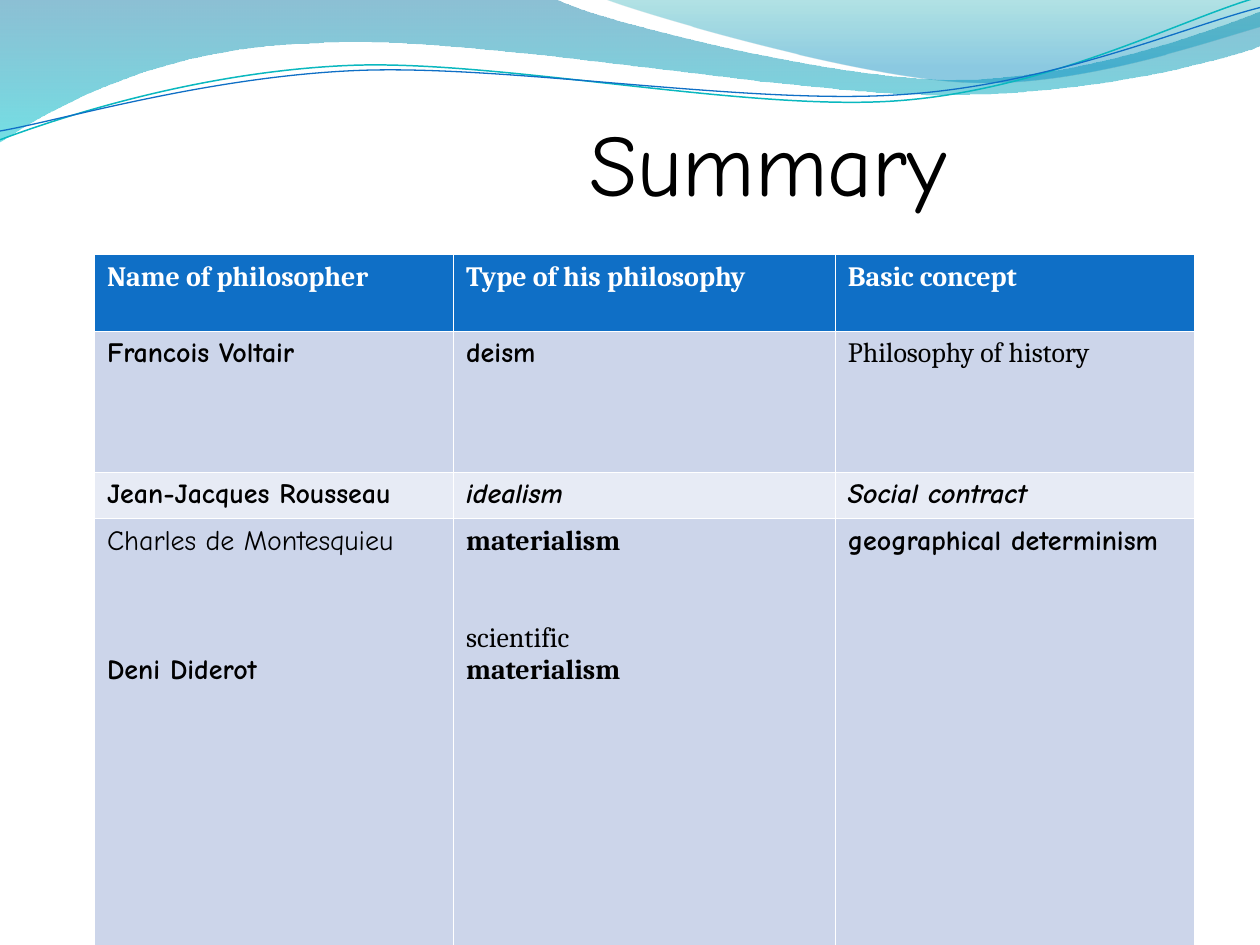
from lxml import etree
from pptx import Presentation
from pptx.dml.color import RGBColor
from pptx.enum import text
from pptx.oxml import ns
from pptx.util import Inches, Pt

WHITE = RGBColor(0xFF, 0xFF, 0xFF)
BLACK = RGBColor(0x00, 0x00, 0x00)
BLUE = RGBColor(0x0F, 0x6F, 0xC6)
TEAL = RGBColor(0x0A, 0xB8, 0xBF)
BAND_DARK = RGBColor(0xCC, 0xD5, 0xEA)
BAND_LIGHT = RGBColor(0xE7, 0xEB, 0xF5)
DEEP_BLUE = RGBColor(0x00, 0x74, 0xA1)
AQUA = RGBColor(0x00, 0xC6, 0xCF)
DEEP_TEAL = RGBColor(0x00, 0xA1, 0xA9)
SKY = RGBColor(0x00, 0x8B, 0xBF)

SERIF, COMIC = "Cambria", "Comic Neue"

# Waves: a start point, then line ends (2 numbers) or Bezier segments (6 numbers)
WIDE_WAVE = [(0, 0), (4.4, -0.01), (4.76, 0.17, 6.64, 0.63, 7.58, 0.63),
             (8.53, 0.63, 9.58, 0.26, 10, 0.09), (10.01, 0.36),
             (9.83, 0.44, 8.7, 0.76, 7.46, 0.75),
             (6.22, 0.75, 3.82, 0.28, 2.57, 0.34),
             (1.29, 0.36, 0.46, 0.83, -0.01, 1.13), (0, 0)]
RIGHT_WAVE = [(4.79, -0.01), (5.09, 0.11, 6.82, 0.62, 7.69, 0.65),
              (8.56, 0.69, 9.61, 0.32, 10, 0.21), (10, 0), (4.79, -0.01)]
TEAL_LINE = [(0, 1.11), (0.48, 0.93, 1.58, 0.57, 2.77, 0.52),
             (3.95, 0.47, 5.93, 0.89, 7.13, 0.8),
             (8.33, 0.71, 9.38, 0.15, 9.98, -0.02)]
BLUE_LINE = [(0, 1.04), (0.47, 0.96, 1.64, 0.61, 2.83, 0.56),
             (4.03, 0.51, 5.97, 0.84, 7.17, 0.75),
             (8.36, 0.67, 9.41, 0.21, 10, 0.06)]

# Table cells: paragraphs of (words, font, bold, italic, points before)
HEADER = [[(words, SERIF, True, False, 0)] for words in
          ("Name of philosopher", "Type of his philosophy", "Basic concept")]
ROWS = [
    HEADER,
    [[("Francois Voltair", COMIC, True, False, 0)],
     [("deism", COMIC, True, False, 0)],
     [("Philosophy of history", SERIF, False, False, 0)]],
    [[("Jean-Jacques Rousseau", COMIC, True, False, 0)],
     [("idealism", COMIC, True, True, 0)],
     [("Social contract", COMIC, True, True, 0)]],
    [[("Charles de Montesquieu", COMIC, False, False, 0),
      ("Deni Diderot", COMIC, True, False, 55.5)],
     [("materialism", SERIF, True, False, 0),
      ("scientific", SERIF, False, False, 37),
      ("materialism", SERIF, True, False, 0)],
     [("geographical determinism", COMIC, True, False, 0)]],
]
ROW_FILLS = [BLUE, BAND_DARK, BAND_LIGHT, BAND_DARK]
ROW_HEIGHTS = [0.61, 1.12, 0.35, 3.41]
COLUMN_WIDTHS = [2.85, 3.03, 2.85]


def add_curve(slide, segments, close):
    """Build the outline from segment ends, then bend the Bezier segments."""
    ends = [(Inches(segment[-2]), Inches(segment[-1])) for segment in segments]
    builder = slide.shapes.build_freeform(*ends[0])
    builder.add_line_segments(ends[1:], close=close)
    shape = builder.convert_to_shape()
    shape.shadow.inherit = False
    for line, segment in zip(shape._element.xpath(".//a:lnTo"), segments[1:]):
        if len(segment) == 6:
            bezier = etree.Element(ns.qn("a:cubicBezTo"))
            for x, y in zip(segment[::2], segment[1::2]):
                etree.SubElement(bezier, ns.qn("a:pt"), x=str(Inches(x) - shape.left),
                                 y=str(Inches(y) - shape.top))
            line.getparent().replace(line, bezier)
    return shape


def add_wave(slide, segments, stops):
    """Add a filled wave; stops are (position, colour, opacity percent)."""
    shape = add_curve(slide, segments, close=True)
    shape.line.fill.background()
    shape.fill.gradient()
    shape.fill.gradient_angle = 270
    for stop, (position, color, _) in zip(shape.fill.gradient_stops, stops):
        stop.position = position
        stop.color.rgb = color
    colors = shape._element.xpath(".//a:gs/a:srgbClr")
    for element, (_, _, opacity) in zip(colors, stops):
        etree.SubElement(element, ns.qn("a:alpha"), val=str(opacity * 1000))


def add_wave_line(slide, segments, color, width):
    shape = add_curve(slide, segments, close=False)
    shape.fill.background()
    shape.line.color.rgb = color
    shape.line.width = Pt(width)


def format_run(run, font, size, color, bold=False, italic=False):
    run.font.name = font
    run.font.size = Pt(size)
    run.font.color.rgb = color
    run.font.bold = bold
    run.font.italic = italic


def add_title(slide, words):
    box = slide.shapes.add_textbox(Inches(0.5), Inches(0.77), Inches(9), Inches(0.93))
    frame = box.text_frame
    frame.word_wrap = True
    frame.vertical_anchor = text.MSO_ANCHOR.BOTTOM
    frame.margin_left, frame.margin_right = Inches(4.18), 0
    frame.margin_top, frame.margin_bottom = Inches(0.05), 0
    frame.text = words
    format_run(frame.paragraphs[0].runs[0], COMIC, 50, BLACK)


def fill_cell(cell, paragraphs, color):
    cell.fill.solid()
    cell.fill.fore_color.rgb = color
    frame = cell.text_frame
    frame.text = "\n".join(item[0] for item in paragraphs)
    ink = WHITE if color == BLUE else BLACK
    for paragraph, (_, font, bold, italic, before) in zip(frame.paragraphs, paragraphs):
        if before:
            paragraph.space_before = Pt(before)
        format_run(paragraph.runs[0], font, 16, ink, bold, italic)


def add_summary_table(slide):
    """Add the table; its white rules come from the default table style."""
    frame = slide.shapes.add_table(len(ROWS), len(COLUMN_WIDTHS), Inches(0.75), Inches(2.02),
                                   Inches(sum(COLUMN_WIDTHS)), Inches(sum(ROW_HEIGHTS)))
    table = frame.table
    for column, width in zip(table.columns, COLUMN_WIDTHS):
        column.width = Inches(width)
    for row, height, cells, color in zip(table.rows, ROW_HEIGHTS, ROWS, ROW_FILLS):
        row.height = Inches(height)
        for cell, paragraphs in zip(row.cells, cells):
            fill_cell(cell, paragraphs, color)


def main():
    presentation = Presentation()
    presentation.slide_width, presentation.slide_height = Inches(10), Inches(7.5)
    slide = presentation.slides.add_slide(presentation.slide_layouts[6])

    # Wave decoration along the top
    add_wave(slide, WIDE_WAVE, [(0, DEEP_BLUE, 45), (1, AQUA, 55)])
    add_wave(slide, RIGHT_WAVE, [(0, DEEP_TEAL, 30), (0.8, SKY, 45)])
    add_wave_line(slide, TEAL_LINE, TEAL, 0.85)
    add_wave_line(slide, BLUE_LINE, BLUE, 0.75)

    # Title and table
    add_title(slide, "Summary")
    add_summary_table(slide)

    presentation.save("out.pptx")


if __name__ == "__main__":
    main()
